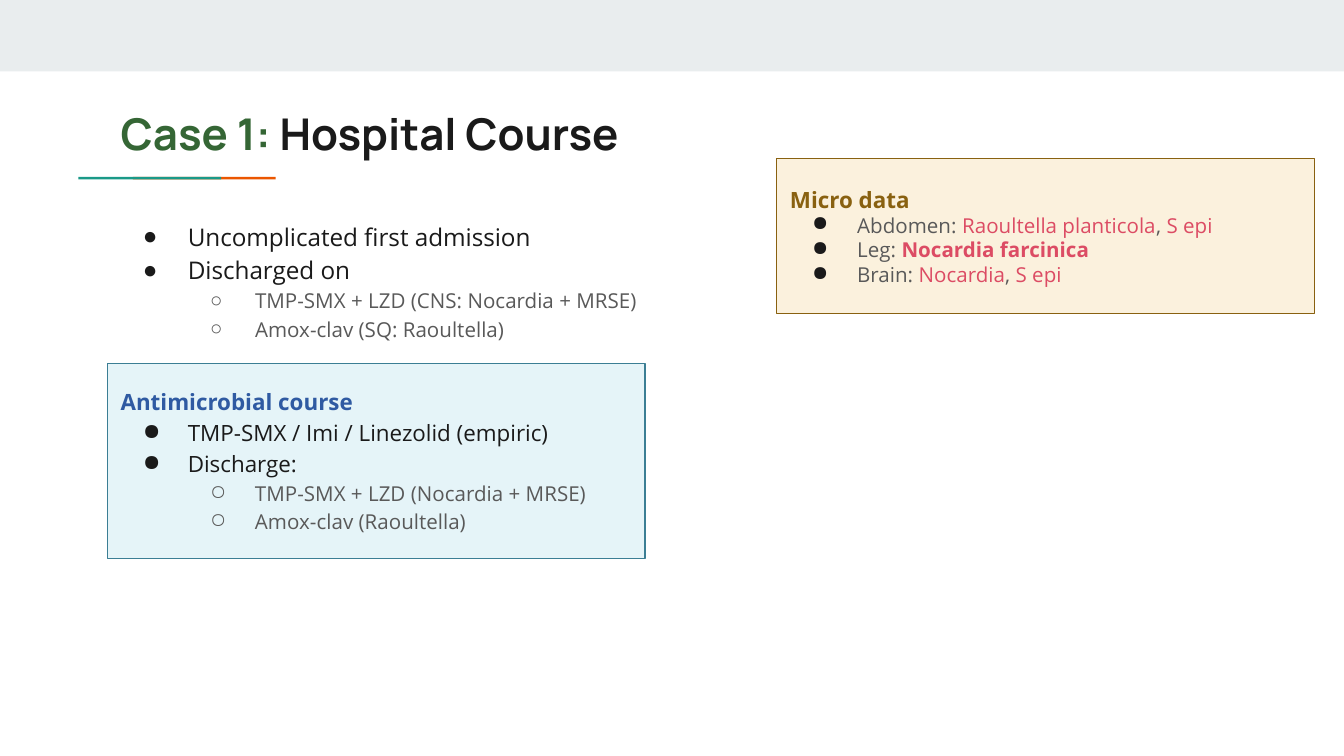
from lxml import etree
from pptx import Presentation
from pptx import util as u
from pptx.dml.color import RGBColor
from pptx.enum import shapes, text
from pptx.oxml.ns import qn

COLORS = {
    "band": "E9EDEE", "teal": "1A9988", "orange": "EB5600",
    "green": "356635", "ink": "1A1A1A", "grey": "595959", "red": "DC4C64",
    "blue": "2F5AA2", "blue_fill": "E5F4F8", "blue_line": "3B7E94",
    "gold": "896110", "gold_fill": "FBF1DD",
}


class Deck:
    title_font = "Manrope"
    body_font = "Open Sans"
    inset = u.Cm(0.25)
    bullets = "●○"

    def __init__(self, prs):
        self.s = prs.slides.add_slide(prs.slide_layouts[1])

    def color(self, name):
        return RGBColor.from_string(COLORS[name])

    def rect(self, x, y, w, h, fill, line=None):
        sp = self.s.shapes.add_shape(
            shapes.MSO_SHAPE.RECTANGLE, u.Cm(x), u.Cm(y), u.Cm(w), u.Cm(h))
        sp.shadow.inherit = False
        sp.fill.solid()
        sp.fill.fore_color.rgb = self.color(fill)
        if line:
            sp.line.color.rgb = self.color(line)
            sp.line.width = u.Pt(0.75)
        else:
            sp.line.fill.background()
        return sp

    def frame(self, sp, anchor):
        tf = sp.text_frame
        tf.word_wrap = True
        tf.auto_size = text.MSO_AUTO_SIZE.NONE
        tf.vertical_anchor = anchor
        tf.margin_left = tf.margin_right = self.inset
        tf.margin_top = tf.margin_bottom = self.inset
        return tf

    def place(self, sp, x, y, w, h):
        sp.left, sp.top, sp.width, sp.height = u.Cm(x), u.Cm(y), u.Cm(w), u.Cm(h)

    def run(self, p, words, size, color, bold=False, font=None):
        r = p.add_run()
        r.text = words
        r.font.name = font or self.body_font
        r.font.size = u.Pt(size)
        r.font.bold = bold
        r.font.color.rgb = self.color(color)

    def bullet(self, p, level, color):
        pPr = p._p.get_or_add_pPr()
        pPr.set("marL", str(u.Cm(1.27 * (level + 1))))
        pPr.set("indent", str(u.Cm(-0.85)))
        clr = etree.SubElement(pPr, qn("a:buClr"))
        etree.SubElement(clr, qn("a:srgbClr"), val=COLORS[color])
        etree.SubElement(pPr, qn("a:buChar"), char=self.bullets[level])
        p.level = level

    def paragraph(self, tf):
        p = tf.add_paragraph() if tf.paragraphs[0].runs else tf.paragraphs[0]
        p.alignment = text.PP_ALIGN.LEFT
        p.space_before = u.Pt(0)
        return p

    def items(self, tf, items, spacing):
        for level, size, color, runs in items:
            p = self.paragraph(tf)
            self.bullet(p, level, color)
            p.line_spacing = spacing
            for words, run_color, bold in runs:
                self.run(p, words, size, run_color, bold)

    def title(self, box, runs):
        sp = self.s.shapes.title
        self.place(sp, *box)
        p = self.paragraph(self.frame(sp, text.MSO_ANCHOR.MIDDLE))
        for words, color in runs:
            self.run(p, words, 23.4, color, True, self.title_font)

    def body(self, box, items):
        sp = self.s.placeholders[1]
        self.place(sp, *box)
        self.items(self.frame(sp, text.MSO_ANCHOR.TOP), items, 1.15)

    def panel(self, box, fill, line, heading, color, items, spacing):
        tf = self.frame(self.rect(*box, fill, line), text.MSO_ANCHOR.MIDDLE)
        self.run(self.paragraph(tf), heading, 12, color, True)
        self.items(tf, items, spacing)


def main_item(words, size):
    return 0, size, "ink", [(words, "ink", False)]


def sub_item(words):
    return 1, 11, "grey", [(words, "grey", False)]


def culture(site, organisms, bold=False):
    runs = [(site + ": ", "grey", False)]
    for i, name in enumerate(organisms):
        if i:
            runs.append((", ", "grey", False))
        runs.append((name, "red", bold))
    return 0, 11, "ink", runs


def main():
    prs = Presentation()
    prs.slide_width, prs.slide_height = u.Cm(25.4), u.Cm(14.28)
    deck = Deck(prs)

    deck.rect(0, 0, 25.4, 1.35, "band")
    for x, color in ((2.51, "orange"), (1.48, "teal")):
        deck.rect(x, 3.34, 2.7, 0.05, color)

    deck.title((2.03, 1.77, 21.36, 1.5),
               [("Case 1:", "green"), (" Hospital Course", "ink")])
    deck.body((2.03, 3.86, 12.14, 6.4), [
        main_item("Uncomplicated first admission", 13),
        main_item("Discharged on", 13),
        sub_item("TMP-SMX + LZD (CNS: Nocardia + MRSE)"),
        sub_item("Amox-clav (SQ: Raoultella)"),
    ])
    deck.panel((2.03, 6.87, 10.16, 3.68), "blue_fill", "blue_line",
               "Antimicrobial course", "blue", [
                   main_item("TMP-SMX / Imi / Linezolid (empiric)", 12),
                   main_item("Discharge:", 12),
                   sub_item("TMP-SMX + LZD (Nocardia + MRSE)"),
                   sub_item("Amox-clav (Raoultella)"),
               ], 1.15)
    deck.panel((14.68, 3, 10.16, 2.92), "gold_fill", "gold",
               "Micro data", "gold", [
                   culture("Abdomen", ["Raoultella planticola", "S epi"]),
                   culture("Leg", ["Nocardia farcinica"], True),
                   culture("Brain", ["Nocardia", "S epi"]),
               ], 1.0)
    prs.save("out.pptx")


if __name__ == "__main__":
    main()
